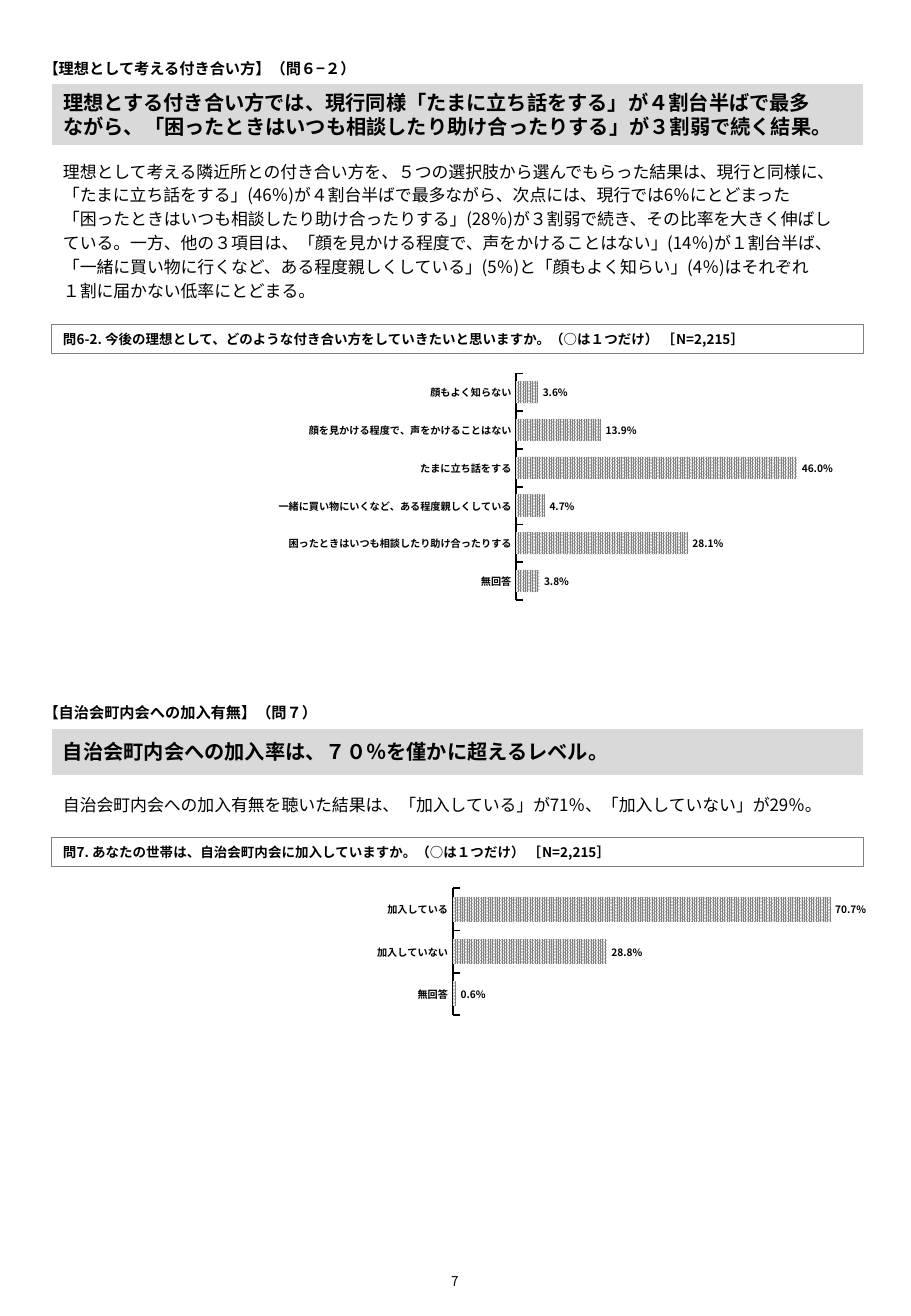
"""Build the survey report page on neighbourly ties and association membership."""
from lxml.etree import SubElement
from pptx import Presentation
from pptx.chart.data import CategoryChartData
from pptx.dml.color import RGBColor
from pptx.enum.chart import XL_CHART_TYPE as ChartType, XL_LABEL_POSITION as LabelPosition
from pptx.enum.chart import XL_TICK_LABEL_POSITION as TickLabels, XL_TICK_MARK as TickMark
from pptx.enum.dml import MSO_PATTERN as Pattern
from pptx.enum.shapes import MSO_SHAPE as Shape
from pptx.enum.text import MSO_ANCHOR as Anchor, PP_ALIGN as Align
from pptx.oxml.ns import qn
from pptx.util import Pt

FONT = "Noto Sans CJK JP"
COLORS = {"text": "000000", "band": "D9D9D9", "paper": "FFFFFF", "gray": "808080"}
PAGE = (540, 779.76)
LEFT, WIDTH = 30.24, 481.68
PAGE_NUMBER = "7"

SECTIONS = [
    {
        "heading": ("【理想として考える付き合い方】（問６−２）", 31.7, 18),
        "headline": (
            "理想とする付き合い方では、現行同様「たまに立ち話をする」が４割台半ばで最多\v"
            "ながら、「困ったときはいつも相談したり助け合ったりする」が３割弱で続く結果。", 49.7, 36.7),
        "body": (
            "理想として考える隣近所との付き合い方を、５つの選択肢から選んでもらった結果は、現行と同様に、\n"
            "「たまに立ち話をする」(46％)が４割台半ばで最多ながら、次点には、現行では6％にとどまった\n"
            "「困ったときはいつも相談したり助け合ったりする」(28％)が３割弱で続き、その比率を大きく伸ばし\n"
            "ている。一方、他の３項目は、「顔を見かける程度で、声をかけることはない」(14％)が１割台半ば、\n"
            "「一緒に買い物に行くなど、ある程度親しくしている」(5％)と「顔もよく知らい」(4％)はそれぞれ\n"
            "１割に届かない低率にとどまる。", 90, 97.9),
        "question": (
            "問6-2. 今後の理想として、どのような付き合い方をしていきたいと思いますか。"
            "（○は１つだけ） ［N=2,215］", 192.2, 17.3),
        "chart": {
            "box": (6.5, 216, 530, 144), "plot": (0.565, 0.41), "maximum": 0.6,
            "values": {
                "顔もよく知らない": 0.036,
                "顔を見かける程度で、声をかけることはない": 0.139,
                "たまに立ち話をする": 0.46,
                "一緒に買い物にいくなど、ある程度親しくしている": 0.047,
                "困ったときはいつも相談したり助け合ったりする": 0.281,
                "無回答": 0.038,
            },
        },
    },
    {
        "heading": ("【自治会町内会への加入有無】（問７）", 413.3, 18),
        "headline": ("自治会町内会への加入率は、７０％を僅かに超えるレベル。", 431.3, 28.1),
        "body": (
            "自治会町内会への加入有無を聴いた結果は、「加入している」が71％、「加入していない」が29％。",
            465.1, 23),
        "question": (
            "問7. あなたの世帯は、自治会町内会に加入していますか。（○は１つだけ） ［N=2,215］", 496.1, 17.3),
        "chart": {
            "box": (5, 523.4, 530, 80.6), "plot": (0.497, 0.478), "maximum": 0.8,
            "values": {"加入している": 0.707, "加入していない": 0.288, "無回答": 0.006},
        },
    },
]


def color(name):
    return RGBColor.from_string(COLORS[name])


def set_all(target, **values):
    for name, value in values.items():
        setattr(target, name, value)


def place(box, left, top, width, height):
    set_all(box, left=Pt(left), top=Pt(top), width=Pt(width), height=Pt(height))


def style_font(font, size, bold):
    set_all(font, name=FONT, size=Pt(size), bold=bold)
    font.color.rgb = color("text")


def write(box, text, size, bold=False, anchor=Anchor.TOP, align=Align.LEFT, spacing=None, wrap=True):
    frame = box.text_frame
    frame.text = text
    set_all(frame, word_wrap=wrap, vertical_anchor=anchor, margin_left=Pt(7.2), margin_right=Pt(7.2),
            margin_top=Pt(3.6), margin_bottom=Pt(3.6))
    for para in frame.paragraphs:
        set_all(para, alignment=align, line_spacing=spacing, space_before=Pt(0))
        for span in para.runs:
            style_font(span.font, size, bold)


def outline(box, name, width, fill=None):
    if fill:
        box.fill.solid()
        box.fill.fore_color.rgb = color(fill)
    else:
        box.fill.background()
    box.line.color.rgb = color(name)
    box.line.width = Pt(width)


def add_rect(page):
    box = page.shapes.add_shape(Shape.RECTANGLE, 0, 0, 0, 0)
    box.shadow.inherit = False
    return box


def add_text(page):
    return page.shapes.add_textbox(0, 0, 0, 0)


def fix_plot(chart, left, width):
    area = chart.element.find(".//" + qn("c:plotArea"))
    for old in area.findall(qn("c:layout")):
        area.remove(old)
    layout = SubElement(area, qn("c:layout"))
    area.insert(0, layout)
    manual = SubElement(layout, qn("c:manualLayout"))
    settings = {"layoutTarget": "inner", "xMode": "edge", "yMode": "edge",
                "x": left, "y": 0.037, "w": width, "h": 0.932}
    for name, value in settings.items():
        SubElement(manual, qn("c:" + name)).set("val", str(value))


def add_bars(page, box, plot, maximum, values):
    data = CategoryChartData(number_format="0.0%")
    data.categories = list(values)
    data.add_series("Series 1", list(values.values()))
    chart = page.shapes.add_chart(ChartType.BAR_CLUSTERED, *map(Pt, box), data).chart
    set_all(chart, has_legend=False, has_title=False)
    style_font(chart.font, 6, True)
    fix_plot(chart, *plot)

    set_all(chart.category_axis, reverse_order=True, major_tick_mark=TickMark.INSIDE,
            minor_tick_mark=TickMark.NONE, has_major_gridlines=False)
    chart.category_axis.format.line.color.rgb = color("text")
    chart.category_axis.format.line.width = Pt(1)
    set_all(chart.value_axis, minimum_scale=0, maximum_scale=maximum, has_major_gridlines=False,
            major_tick_mark=TickMark.NONE, minor_tick_mark=TickMark.NONE,
            tick_label_position=TickLabels.NONE)
    chart.value_axis.format.line.fill.background()

    bars = chart.plots[0]
    set_all(bars, gap_width=70, vary_by_categories=False, has_data_labels=True)
    set_all(bars.data_labels, show_value=True, number_format="0.0%", number_format_is_linked=False,
            position=LabelPosition.OUTSIDE_END)
    style_font(bars.data_labels.font, 6, True)
    fill = bars.series[0].format.fill
    fill.patterned()
    fill.pattern = Pattern.PERCENT_90
    fill.fore_color.rgb = color("gray")
    fill.back_color.rgb = color("paper")
    return chart


def add_east_asian_font(root):
    for latin in list(root.iter(qn("a:latin"))):
        east_asian = SubElement(latin.getparent(), qn("a:ea"))
        east_asian.set("typeface", FONT)
        latin.addnext(east_asian)


def add_section(page, section, headline_box):
    text, top, height = section["heading"]
    heading = add_text(page)
    place(heading, 18.72, top, 425.5, height)
    write(heading, text, 9, bold=True, wrap=False)

    text, top, height = section["headline"]
    place(headline_box, LEFT, top, WIDTH, height)
    outline(headline_box, "paper", 0.75, fill="band")
    write(headline_box, text, 12, bold=True, anchor=Anchor.MIDDLE, spacing=Pt(14.2))

    text, top, height = section["body"]
    body = add_text(page)
    place(body, LEFT, top, WIDTH, height)
    write(body, text, 10, spacing=Pt(14.1))

    text, top, height = section["question"]
    question = add_rect(page)
    place(question, LEFT, top, WIDTH, height)
    outline(question, "gray", 0.5)
    write(question, text, 8, bold=True, anchor=Anchor.MIDDLE)

    add_east_asian_font(add_bars(page, **section["chart"]).element)


def main():
    deck = Presentation()
    set_all(deck, slide_width=Pt(PAGE[0]), slide_height=Pt(PAGE[1]))
    page = deck.slides.add_slide(deck.slide_layouts[5])
    for index, section in enumerate(SECTIONS):
        add_section(page, section, add_rect(page) if index else page.shapes.title)
    number = add_text(page)
    place(number, 206.6, 738, 126, 41.8)
    write(number, PAGE_NUMBER, 8, anchor=Anchor.MIDDLE, align=Align.CENTER)
    add_east_asian_font(page.element)
    deck.save("out.pptx")


if __name__ == "__main__":
    main()
